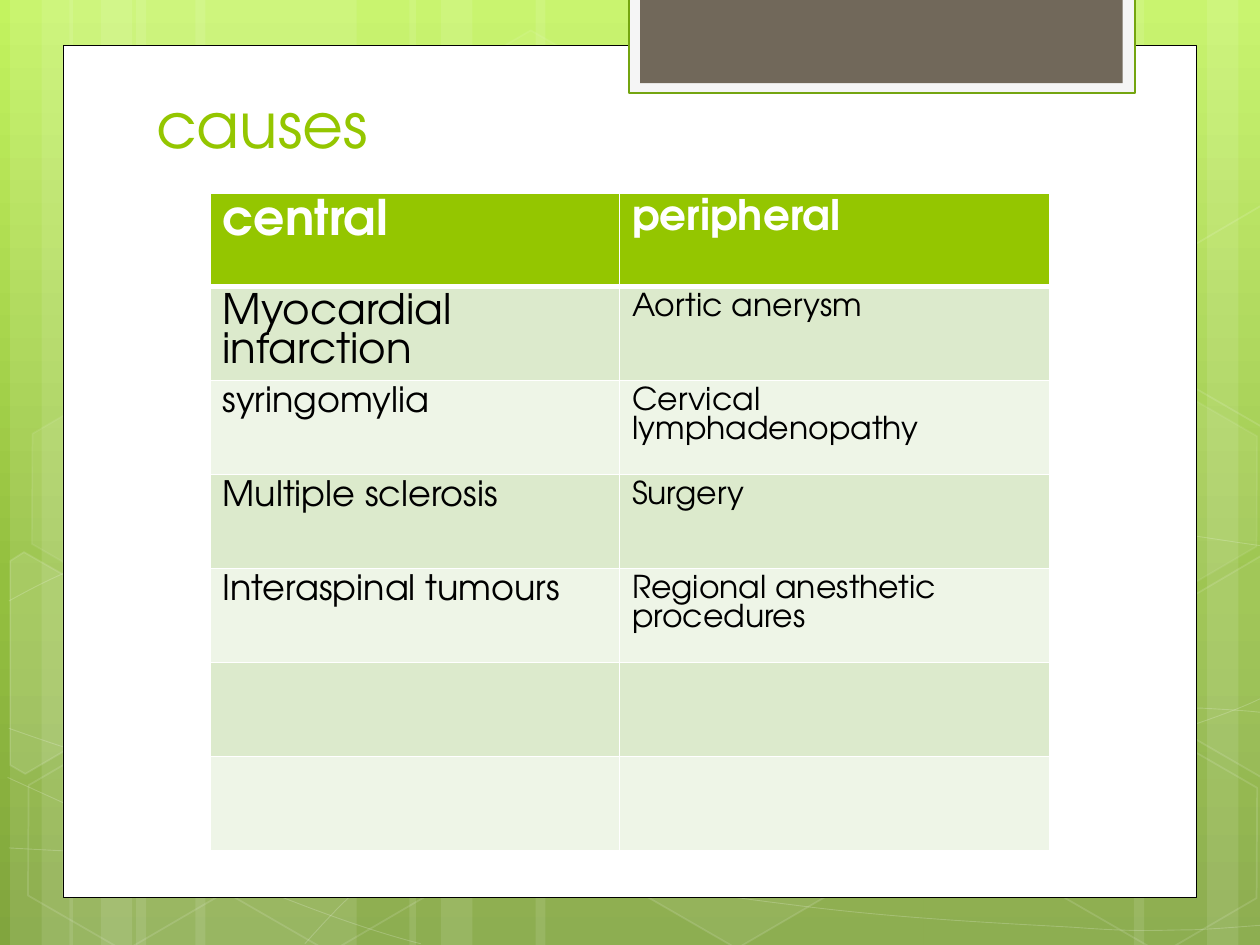
from copy import deepcopy
from math import cos, radians, sin

from lxml.etree import SubElement
from pptx import Presentation
from pptx.dml.color import RGBColor
from pptx.enum.shapes import MSO_SHAPE
from pptx.enum.text import MSO_ANCHOR, PP_ALIGN
from pptx.oxml.ns import qn
from pptx.util import Inches, Pt

FONT = "TeX Gyre Adventor"
WHITE, GREEN = "FFFFFF", "94C600"
BANDS = ["DCEACC", "EEF5E7"]
BACKGROUND = [(0, "C3F35F"), (0.62, "93BF3F"), (1, "81A53E")]
TILT = 30

STRIPES = [(1.08, 1.75), (0.08, 0.5), (0.33, 0.83), (1.55, 1.75), (0.55, 0.5), (0.8, 0.83),
           (7.33, 1.75), (9.58, 0.5), (9, 0.83), (4.25, 3.08), (3.25, 0.5), (3.5, 0.83)]
CURVES = [
    ([(0.07, 6.73), (0.61, 6.76), (1.15, 6.79), (1.9, 6.78), (2.65, 6.77), (3.58, 6.75),
      (4.58, 6.65), (5.58, 6.55), (7, 6.36), (7.92, 6.17), (8.83, 5.98), (9.77, 5.68),
      (10.07, 5.51)], None),
    ([(0.07, 4.77), (0.36, 4.61), (0.65, 4.46), (1.21, 4.31), (1.78, 4.16), (2.59, 3.94),
      (3.47, 3.87), (4.36, 3.8), (5.44, 3.79), (6.54, 3.87), (7.64, 3.95), (9.47, 4.26),
      (10.07, 4.34)], None),
    ([(0.06, 6.17), (1.27, 6.72), (2.47, 7.27), (3.34, 7.49)], None),
    ([(0.07, 5.78), (0.38, 5.89), (0.7, 6), (1.28, 6.16), (1.86, 6.31), (2.73, 6.56),
      (3.57, 6.73), (4.4, 6.9), (5.45, 7.08), (6.28, 7.18), (7.11, 7.29), (8, 7.33),
      (8.53, 7.36), (9.05, 7.4), (9.19, 7.38), (9.45, 7.38), (9.71, 7.37), (9.89, 7.35),
      (10.07, 7.34)], None),
    ([(2.42, 7.49), (2.6, 7.29), (2.78, 7.09), (3.02, 6.91), (3.26, 6.73), (3.6, 6.53),
      (3.88, 6.39), (4.16, 6.25), (4.33, 6.19), (4.7, 6.09), (5.06, 5.99), (5.73, 5.85),
      (6.08, 5.78), (6.44, 5.71), (6.49, 5.71), (6.8, 5.69), (7.11, 5.66), (7.6, 5.63),
      (7.94, 5.62), (8.29, 5.61), (8.86, 5.62), (8.86, 5.62), (9.53, 5.62), (9.71, 5.63),
      (9.88, 5.64), (9.97, 5.65), (10.06, 5.66), (10.03, 5.65), (10.06, 5.66)], 21),
]
HEXAGONS = [(3.34, 0.36, 4, 8), (4.97, 5.89, 6, 12), (0.11, 5.91, None, 12),
            (0.14, 3.12, 7, 8), (1.74, 5.92, None, 12), (7.53, 4.53, 10, 12),
            (8.34, 5.93, None, 12), (8.34, 3.14, 7, 8)]
CUT_HEXAGONS = [
    ((0.36, 5.35), 10,
     [(0.08, 4.45), (0.19, 4.38), (0.96, 4.82), (0.95, 5.7), (0.2, 6.14), (0.08, 6.07)]),
    ((9.85, 5.2), 4,
     [(9.26, 4.85), (10.01, 4.41), (10.09, 4.46), (10.09, 6.13), (10.02, 6.17), (9.26, 5.73)]),
    ((9.85, 2.41), None,
     [(9.26, 2.07), (10.01, 1.63), (10.1, 1.68), (10.09, 3.35), (10.02, 3.39), (9.26, 2.95)]),
]
CAUSES = [
    [("central", 28), ("peripheral", 24)],
    [("Myocardial infarction", 24), ("Aortic anerysm", 18)],
    [("syringomylia", 20), ("Cervical lymphadenopathy", 18)],
    [("Multiple sclerosis", 20), ("Surgery", 18)],
    [("Interaspinal tumours", 20), ("Regional anesthetic procedures", 18)],
    [("", 18), ("", 18)],
    [("", 18), ("", 18)],
]


def paint(fill, color, opacity=100):
    if color is None:
        fill.background()
        return
    fill.solid()
    fill.fore_color.rgb = RGBColor.from_string(color)
    if opacity < 100:
        tint = fill._xPr.find(".//" + qn("a:srgbClr"))
        SubElement(tint, qn("a:alpha"), val=str(opacity * 1000))


def style(shape, color=None, opacity=100, line=None, width=1, line_opacity=100):
    shape.shadow.inherit = False
    paint(shape.fill, color, opacity)
    paint(shape.line.fill, line, line_opacity)
    if line:
        shape.line.width = Pt(width)


def style_hexagon(shape, opacity, line_opacity):
    shape.rotation = TILT
    style(shape, WHITE if opacity else None, opacity or 100, WHITE, 1, line_opacity)


def add_box(page, kind, box):
    return page.shapes.add_shape(kind, *map(Inches, box))


def add_outline(page, points, closed):
    start, *others = [(Inches(x), Inches(y)) for x, y in points]
    builder = page.shapes.build_freeform(*start)
    builder.add_line_segments(others, close=closed)
    return builder.convert_to_shape()


def add_curve(page, points, straight):
    shape = add_outline(page, points, False)
    segments = list(shape.element.iter(qn("a:lnTo")))
    index = 0
    while index < len(segments):
        if index == straight:
            index += 1
            continue
        curve = SubElement(segments[index].getparent(), qn("a:cubicBezTo"))
        segments[index].addprevious(curve)
        for segment in segments[index:index + 3]:
            curve.append(segment[0])
            segment.getparent().remove(segment)
        index += 3
    return shape


def turn_back(point, center):
    x, y = point[0] - center[0], point[1] - center[1]
    cosine, sine = cos(radians(TILT)), sin(radians(TILT))
    return center[0] + x * cosine + y * sine, center[1] - x * sine + y * cosine


def fill_background(page):
    fill = page.background.fill
    fill.gradient()
    fill.gradient_angle = 270
    stop_list = page.element.find(".//" + qn("a:gsLst"))
    stop_list.append(deepcopy(stop_list[-1]))
    for stop, (position, color) in zip(fill.gradient_stops, BACKGROUND):
        stop.position = position
        stop.color.rgb = RGBColor.from_string(color)


def add_decoration(page, height):
    for left, width in STRIPES:
        style(add_box(page, MSO_SHAPE.RECTANGLE, (left, 0, width, height)), WHITE, 10)
    for points, straight in CURVES:
        style(add_curve(page, points, straight), line=WHITE, width=0.5, line_opacity=20)
    for left, top, opacity, line_opacity in HEXAGONS:
        hexagon = add_box(page, MSO_SHAPE.HEXAGON, (left, top, 1.75, 1.52))
        hexagon.adjustments[0] = 0.285
        style_hexagon(hexagon, opacity, line_opacity)
    for center, opacity, points in CUT_HEXAGONS:
        upright = [turn_back(point, center) for point in points]
        style_hexagon(add_outline(page, upright, True), opacity, 12)


def add_panel(page, box):
    left, top, width, height = box
    style(add_box(page, MSO_SHAPE.RECTANGLE, box), WHITE, line="000000", width=0.5)
    tab_left = left + width - 4.51
    style(add_box(page, MSO_SHAPE.RECTANGLE, (tab_left, -0.02, 4.02, 0.76)),
          "F5F5F5", line="74A510", width=1.25)
    style(add_box(page, MSO_SHAPE.RECTANGLE, (tab_left + 0.09, -0.02, 3.83, 0.68)), "71685A")


def format_text(para, size, color, bold=False):
    para.alignment = PP_ALIGN.LEFT
    para.font.name = FONT
    para.font.size = Pt(size)
    para.font.bold = bold
    para.font.color.rgb = RGBColor.from_string(color)


def place_title(page, text, box):
    title = page.shapes.title
    title.element.getparent().append(title.element)
    title.left, title.top, title.width, title.height = map(Inches, box)
    title.text_frame.text = text
    title.text_frame.vertical_anchor = MSO_ANCHOR.BOTTOM
    format_text(title.text_frame.paragraphs[0], 36, GREEN)


def set_borders(cell, top_width, bottom_width):
    properties = cell._tc.get_or_add_tcPr()
    widths = [("L", 1), ("R", 1), ("T", top_width), ("B", bottom_width)]
    for index, (side, width) in enumerate(widths):
        border = SubElement(properties, qn("a:ln" + side), w=str(Pt(width)))
        SubElement(SubElement(border, qn("a:solidFill")), qn("a:srgbClr"), val=WHITE)
        properties.insert(index, border)


def add_causes_table(page, box):
    table = page.shapes.add_table(len(CAUSES), 2, *map(Inches, box)).table
    table.columns[0].width = Inches(3.25)
    table.columns[1].width = Inches(box[2] - 3.25)
    for row, entries in enumerate(CAUSES):
        header = row == 0
        for column, (text, size) in enumerate(entries):
            cell = table.cell(row, column)
            cell.text = text
            format_text(cell.text_frame.paragraphs[0], size, WHITE if header else "000000", header)
            paint(cell.fill, GREEN if header else BANDS[(row - 1) % 2])
            set_borders(cell, 3 if row == 1 else 1, 3 if header else 1)


def main():
    deck = Presentation()
    deck.slide_width, deck.slide_height = Inches(10), Inches(7.5)
    page = deck.slides.add_slide(deck.slide_layouts[5])
    fill_background(page)
    add_decoration(page, 7.5)
    add_panel(page, (0.5, 0.36, 9, 6.76))
    place_title(page, "causes", (1.14, 0.58, 7.68, 0.75))
    add_causes_table(page, (5 / 3, 1.53, 20 / 3, 5.22))
    deck.save("out.pptx")


if __name__ == "__main__":
    main()
